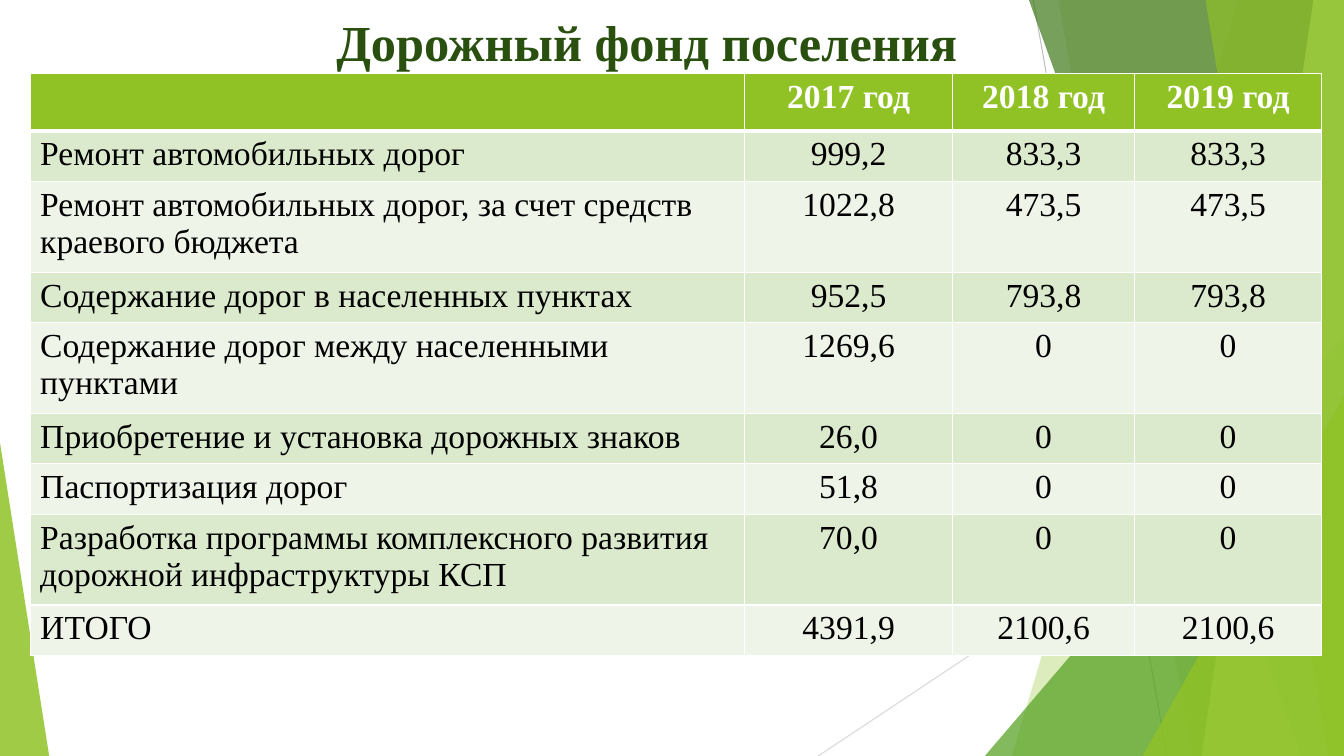
from dataclasses import dataclass

from lxml.etree import SubElement
from pptx import Presentation
from pptx.dml.color import RGBColor
from pptx.enum.shapes import MSO_CONNECTOR, MSO_SHAPE
from pptx.enum.text import MSO_ANCHOR, PP_ALIGN
from pptx.oxml.ns import qn
from pptx.shapes.autoshape import Shape
from pptx.shapes.shapetree import SlideShapes
from pptx.table import _Cell
from pptx.text.text import _Paragraph
from pptx.util import Cm, Pt

WHITE = RGBColor(0xFF, 0xFF, 0xFF)
BLACK = RGBColor(0x00, 0x00, 0x00)
LIME = RGBColor(0x90, 0xC2, 0x26)
PALE_LIME = RGBColor(0xC0, 0xE4, 0x74)
GREEN = RGBColor(0x54, 0xA0, 0x21)
FOREST = RGBColor(0x3F, 0x78, 0x19)
TITLE_GREEN = RGBColor(0x2A, 0x50, 0x10)
BAND_DARK = RGBColor(0xDB, 0xE9, 0xCD)
BAND_LIGHT = RGBColor(0xEE, 0xF4, 0xE8)
GRAY = RGBColor(0xBF, 0xBF, 0xBF)
LIGHT_GRAY = RGBColor(0xD9, 0xD9, 0xD9)

FONT = "Times New Roman"
SLIDE_WIDTH, SLIDE_HEIGHT = 33.87, 19.05
UNITS_PER_CM = 100


@dataclass(frozen=True)
class Ray:
    start: tuple[float, float]
    end: tuple[float, float]
    color: RGBColor


@dataclass(frozen=True)
class Panel:
    top_x: float
    bottom_x: float
    color: RGBColor
    opacity: int


@dataclass(frozen=True)
class Wedge:
    left: float
    top: float
    width: float
    apex: float
    color: RGBColor
    opacity: int


@dataclass(frozen=True)
class Expense:
    purpose: str
    amounts: tuple[str, str, str]


RAYS = (
    Ray((26.04, 0), (29.41, SLIDE_HEIGHT), GRAY),
    Ray((SLIDE_WIDTH, 10.24), (20.62, SLIDE_HEIGHT), LIGHT_GRAY),
)
FACETS = (
    Panel(31.19, 25.5, LIME, 30),
    Panel(26.67, 30.05, LIME, 20),
    Wedge(24.82, 8.46, 9.05, 1, GREEN, 72),
    Panel(25.93, 32.79, FOREST, 70),
    Panel(33.1, 30.28, PALE_LIME, 70),
    Panel(30.38, 33.48, LIME, 65),
    Wedge(28.8, 9.98, 5.07, 1, LIME, 80),
    Wedge(0, 11.15, 1.24, 0, LIME, 85),
)
COLUMN_WIDTHS = (18.01, 5.23, 4.6, 4.7)
HEADER_HEIGHT, EXPENSE_HEIGHT = 1.45, 1.09
HEADINGS = ("", "2017 год", "2018 год", "2019 год")
EXPENSES = (
    Expense("Ремонт автомобильных дорог", ("999,2", "833,3", "833,3")),
    Expense("Ремонт автомобильных дорог, за счет средств краевого бюджета",
            ("1022,8", "473,5", "473,5")),
    Expense("Содержание дорог в населенных пунктах", ("952,5", "793,8", "793,8")),
    Expense("Содержание дорог между населенными пунктами", ("1269,6", "0", "0")),
    Expense("Приобретение и установка дорожных знаков", ("26,0", "0", "0")),
    Expense("Паспортизация дорог", ("51,8", "0", "0")),
    Expense("Разработка программы комплексного развития дорожной инфраструктуры КСП",
            ("70,0", "0", "0")),
    Expense("ИТОГО", ("4391,9", "2100,6", "2100,6")),
)


def draw_ray(shapes: SlideShapes, ray: Ray) -> None:
    points = (Cm(value) for value in ray.start + ray.end)
    connector = shapes.add_connector(MSO_CONNECTOR.STRAIGHT, *points)
    connector.line.color.rgb = ray.color
    connector.line.width = Pt(0.75)
    SubElement(connector._element.spPr, qn("a:effectLst"))


def paint(facet: Shape, color: RGBColor, opacity: int) -> None:
    facet.shadow.inherit = False
    facet.line.fill.background()
    facet.fill.solid()
    facet.fill.fore_color.rgb = color
    tint = facet._element.spPr.find(qn("a:solidFill"))[0]
    SubElement(tint, qn("a:alpha"), val=str(opacity * 1000))


def draw_panel(shapes: SlideShapes, panel: Panel) -> None:
    corners = [(panel.top_x, 0), (SLIDE_WIDTH, 0),
               (SLIDE_WIDTH, SLIDE_HEIGHT), (panel.bottom_x, SLIDE_HEIGHT)]
    start, *others = [(round(x * UNITS_PER_CM), round(y * UNITS_PER_CM))
                      for x, y in corners]
    outline = shapes.build_freeform(*start, scale=Cm(1) / UNITS_PER_CM)
    outline.add_line_segments(others, close=True)
    paint(outline.convert_to_shape(), panel.color, panel.opacity)


def draw_wedge(shapes: SlideShapes, wedge: Wedge) -> None:
    triangle = shapes.add_shape(
        MSO_SHAPE.ISOSCELES_TRIANGLE, Cm(wedge.left), Cm(wedge.top),
        Cm(wedge.width), Cm(SLIDE_HEIGHT - wedge.top))
    triangle.adjustments[0] = wedge.apex
    paint(triangle, wedge.color, wedge.opacity)


def style(paragraph: _Paragraph, size: int, color: RGBColor, bold: bool,
          alignment: PP_ALIGN) -> None:
    paragraph.alignment = alignment
    paragraph.font.name = FONT
    paragraph.font.size = Pt(size)
    paragraph.font.bold = bold
    paragraph.font.color.rgb = color


def draw_title(shapes: SlideShapes) -> None:
    title = shapes.add_textbox(Cm(1.7), Cm(0), Cm(29.21), Cm(1.7)).text_frame
    title.word_wrap = True
    title.vertical_anchor = MSO_ANCHOR.TOP
    title.margin_top, title.margin_bottom = Cm(0.28), Cm(0)
    title.text = "Дорожный фонд поселения"
    style(title.paragraphs[0], 36, TITLE_GREEN, True, PP_ALIGN.CENTER)


def add_borders(cell: _Cell, top: int, bottom: int) -> None:
    properties = cell._tc.get_or_add_tcPr()
    for side, width in (("L", 1), ("R", 1), ("T", top), ("B", bottom)):
        border = SubElement(properties, qn(f"a:ln{side}"), w=str(Pt(width)))
        solid = SubElement(border, qn("a:solidFill"))
        SubElement(solid, qn("a:srgbClr"), val=str(WHITE))


def draw_fund_table(shapes: SlideShapes) -> None:
    rows = [HEADINGS, *((item.purpose, *item.amounts) for item in EXPENSES)]
    heights = [HEADER_HEIGHT] + [EXPENSE_HEIGHT] * len(EXPENSES)
    fund = shapes.add_table(
        len(rows), len(HEADINGS), Cm(0.76), Cm(1.85),
        Cm(sum(COLUMN_WIDTHS)), Cm(sum(heights))).table
    fund.horz_banding = False
    for column, width in zip(fund.columns, COLUMN_WIDTHS):
        column.width = Cm(width)
    for r, (texts, height) in enumerate(zip(rows, heights)):
        fund.rows[r].height = Cm(height)
        header = r == 0
        band = LIME if header else BAND_DARK if r % 2 else BAND_LIGHT
        for c, text in enumerate(texts):
            cell = fund.cell(r, c)
            add_borders(cell, top=3 if r == 1 else 1, bottom=3 if header else 1)
            cell.fill.solid()
            cell.fill.fore_color.rgb = band
            cell.text = text
            style(cell.text_frame.paragraphs[0], 24, WHITE if header else BLACK,
                  header, PP_ALIGN.CENTER if c else PP_ALIGN.LEFT)


def main() -> None:
    presentation = Presentation()
    presentation.slide_width = Cm(SLIDE_WIDTH)
    presentation.slide_height = Cm(SLIDE_HEIGHT)
    shapes = presentation.slides.add_slide(presentation.slide_layouts[6]).shapes
    for ray in RAYS:
        draw_ray(shapes, ray)
    for facet in FACETS:
        if isinstance(facet, Panel):
            draw_panel(shapes, facet)
        else:
            draw_wedge(shapes, facet)
    draw_title(shapes)
    draw_fund_table(shapes)
    presentation.save("out.pptx")


if __name__ == "__main__":
    main()
